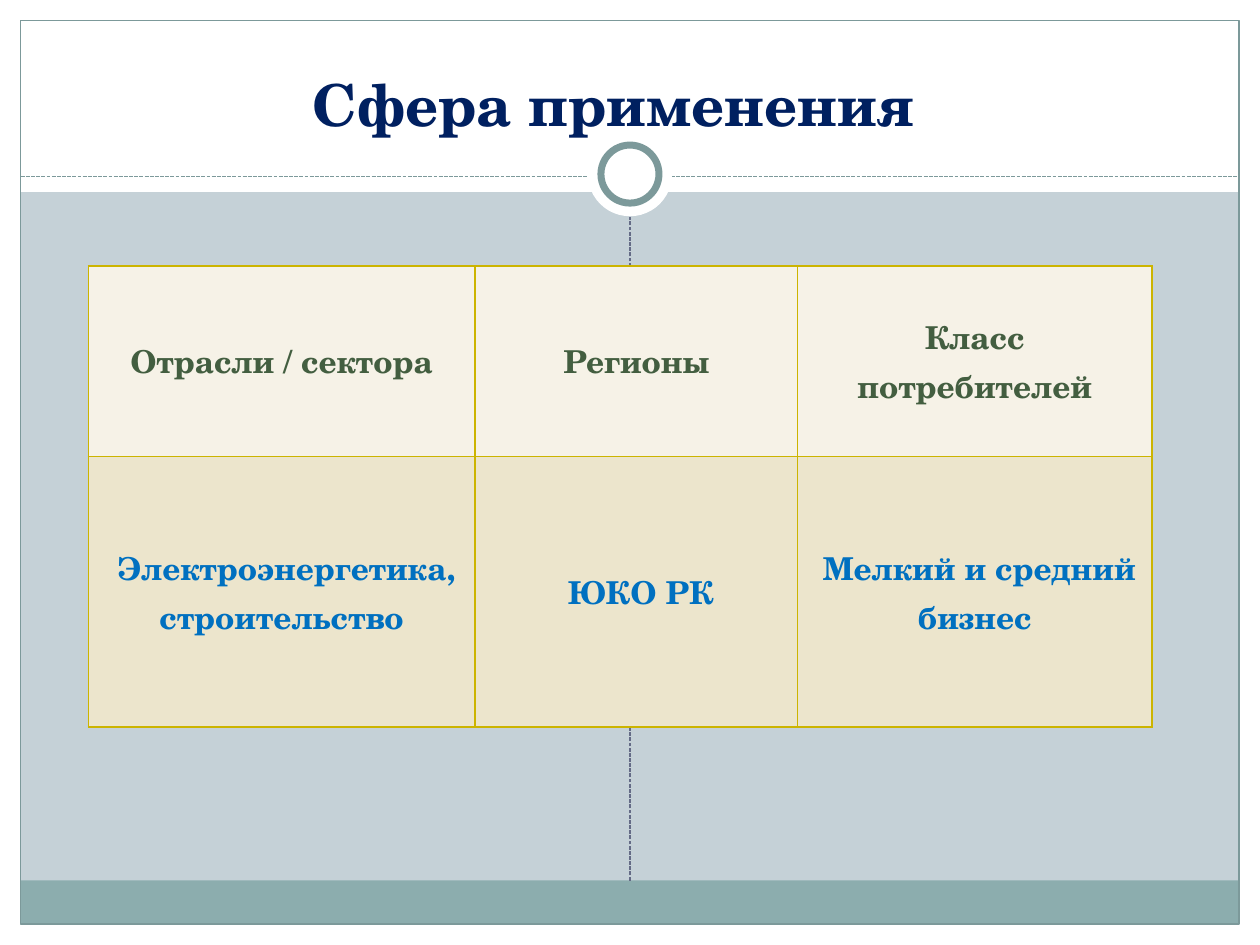
from lxml.etree import SubElement as Sub
from pptx import Presentation
from pptx.dml.color import RGBColor
from pptx.enum.dml import MSO_LINE as Dash
from pptx.enum.shapes import MSO_CONNECTOR as Conn, MSO_SHAPE as Shape
from pptx.enum.text import MSO_ANCHOR as Anchor, PP_ALIGN as Align
from pptx.oxml.ns import qn
from pptx.util import Cm, Pt

WHITE = RGBColor(0xFF, 0xFF, 0xFF)
MIST = RGBColor(0xC5, 0xD1, 0xD7)
TEAL = RGBColor(0x8C, 0xAD, 0xAE)
EDGE = RGBColor(0x7C, 0x99, 0x9A)
SLATE = RGBColor(0x64, 0x6B, 0x86)
NAVY = RGBColor(0x00, 0x20, 0x60)
GREEN = RGBColor(0x43, 0x5E, 0x40)
BLUE = RGBColor(0x00, 0x70, 0xC0)
CREAM = RGBColor(0xF6, 0xF2, 0xE7)
SAND = RGBColor(0xEC, 0xE5, 0xCC)
GOLD = RGBColor(0xCC, 0xB4, 0x00)

WIDE, HIGH = 25.4, 19.05
RIM = 0.42
MID, RULE = WIDE / 2, 3.56
FOOT = 17.75

ROWS = [
    (3.84, CREAM, GREEN, ["Отрасли / сектора", "Регионы", "Класс потребителей"]),
    (5.46, SAND, BLUE, [" Электроэнергетика, строительство", " ЮКО РК",
                        " Мелкий и средний бизнес"]),
]
COLS = [7.8, 6.5, 7.14]


class Deck:
    font = "TeX Gyre Schola"

    def __init__(self):
        self.prs = Presentation()
        self.prs.slide_width, self.prs.slide_height = Cm(WIDE), Cm(HIGH)
        self.slide = self.prs.slides.add_slide(self.prs.slide_layouts[5])
        self.shapes = self.slide.shapes

    def ground(self, color):
        fill = self.slide.background.fill
        fill.solid()
        fill.fore_color.rgb = color

    def shape(self, kind, box, fill=None, line=None, width=0.75):
        item = self.shapes.add_shape(kind, *map(Cm, box))
        item.shadow.inherit = False
        for part, color in ((item.fill, fill), (item.line.fill, line)):
            if color is None:
                part.background()
            else:
                part.solid()
                part.fore_color.rgb = color
        if line is not None:
            item.line.width = Pt(width)

    def ring(self, size, **style):
        """Draw a circle around the centre of the emblem."""
        half = size / 2
        self.shape(Shape.OVAL, (MID - half, 3.51 - half, size, size), WHITE, **style)

    def dashes(self, start, end, color):
        item = self.shapes.add_connector(Conn.STRAIGHT, *map(Cm, start + end))
        item.line.color.rgb = color
        item.line.width = Pt(0.75)
        item.line.dash_style = Dash.SQUARE_DOT
        Sub(item._element.spPr, qn("a:effectLst"))

    def text(self, frame, words, size, color):
        para = frame.paragraphs[0]
        para.alignment = Align.CENTER
        run = para.add_run()
        run.text = words
        font = run.font
        font.name, font.size, font.bold = self.font, Pt(size), True
        font.color.rgb = color
        return para

    def title(self, words, box):
        item = self.shapes.title
        item.left, item.top, item.width, item.height = map(Cm, box)
        frame = item.text_frame
        frame.word_wrap = True
        frame.vertical_anchor = Anchor.BOTTOM
        self.text(frame, words, 33, NAVY)
        # The placeholder comes first in the tree, so bring it to the front.
        self.shapes._spTree.append(item._element)

    def border(self, cell):
        props = cell._tc.get_or_add_tcPr()
        for at, side in enumerate(("lnL", "lnR", "lnT", "lnB")):
            line = Sub(props, qn("a:" + side), w=str(Pt(1)))
            Sub(Sub(line, qn("a:solidFill")), qn("a:srgbClr"), val=str(GOLD))
            props.insert(at, line)

    def table(self, left, top):
        high = sum(row[0] for row in ROWS)
        box = map(Cm, (left, top, sum(COLS), high))
        grid = self.shapes.add_table(len(ROWS), len(COLS), *box).table
        for col, width in zip(grid.columns, COLS):
            col.width = Cm(width)
        for row, (height, fill, color, texts) in zip(grid.rows, ROWS):
            row.height = Cm(height)
            for cell, words in zip(row.cells, texts):
                cell.fill.solid()
                cell.fill.fore_color.rgb = fill
                cell.vertical_anchor = Anchor.MIDDLE
                para = self.text(cell.text_frame, words, 18, color)
                para.line_spacing = Pt(28)
                self.border(cell)


def main():
    deck = Deck()
    deck.ground(MIST)
    for box in ((0, HIGH - RIM, WIDE, RIM), (0, 0, WIDE, 3.87),
                (0, 0, RIM, HIGH), (WIDE - RIM, 0, RIM, HIGH)):
        deck.shape(Shape.RECTANGLE, box, WHITE)
    inner = WIDE - 2 * RIM
    deck.shape(Shape.RECTANGLE, (RIM, FOOT, inner, HIGH - RIM - FOOT), TEAL)
    deck.shape(Shape.RECTANGLE, (RIM, RIM, inner, HIGH - 2 * RIM), line=EDGE)
    deck.dashes((RIM, RULE), (WIDE - RIM, RULE), EDGE)
    deck.ring(1.7)
    deck.ring(1.17, line=EDGE, width=4)
    deck.dashes((MID, FOOT), (MID, 4.37), SLATE)
    deck.title("Сфера применения", (1, 0.79, 22.73, 2.13))
    deck.table(1.78, 5.36)
    deck.prs.save("out.pptx")


if __name__ == "__main__":
    main()
